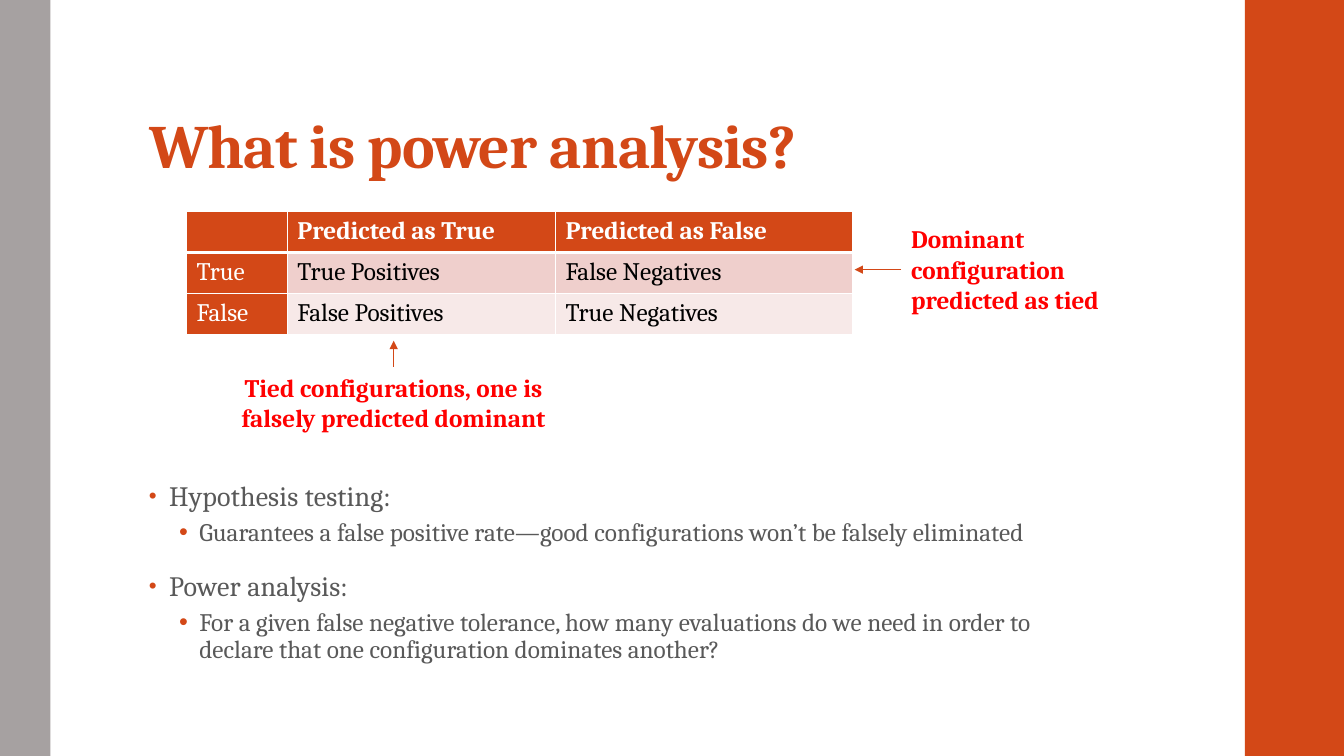
from dataclasses import dataclass

from lxml.etree import SubElement
from pptx import Presentation
from pptx.dml.color import RGBColor
from pptx.enum.shapes import MSO_CONNECTOR, MSO_SHAPE
from pptx.enum.text import MSO_ANCHOR, PP_ALIGN
from pptx.oxml import parse_xml
from pptx.oxml.ns import nsdecls, qn
from pptx.util import Inches, Pt


@dataclass(frozen=True)
class Theme:
    font: str = "Cambria"
    accent: str = "D34817"
    grey: str = "A6A1A1"
    body: str = "595959"
    note: str = "FF0000"
    white: str = "FFFFFF"
    black: str = "000000"
    stripes: tuple = ("EFCFCC", "F7E9E8")
    title_size: int = 44
    topic_size: int = 20
    text_size: int = 18
    hairline: float = 0.75


THEME = Theme()
TITLE = "What is power analysis?"
TOPICS = [
    ("Hypothesis testing:",
     "Guarantees a false positive rate—good configurations won’t be falsely eliminated"),
    ("Power analysis:",
     "For a given false negative tolerance, how many evaluations do we need in order to "
     "declare that one configuration dominates another?"),
]
OUTCOMES = [
    ("", "Predicted as True", "Predicted as False"),
    ("True", "True Positives", "False Negatives"),
    ("False", "False Positives", "True Negatives"),
]
TIED_NOTE = "Tied configurations, one is falsely predicted dominant"
DOMINANT_NOTE = "Dominant configuration predicted as tied"

# Shares are percentages of the slide: left, top, width, height.
BANDS = [((92.62, 0, 7.5, 100), THEME.accent), ((0, 0, 3.75, 100), THEME.grey)]
TITLE_AREA = (10.35, 4.27, 79.5, 20.4)
TOPICS_AREA = (10.35, 62.93, 70.5, 30.27)
TIED_AREA = (16.95, 48.53, 24.68, 13.47)
DOMINANT_AREA = (67.05, 28.93, 18.38, 13.47)
TABLE_CORNER = (13.88, 28)
COLUMN_SHARES = (7.5, 19.95, 22.12)
ROW_SHARE = 5.42
ARROW_REACH = 3.46

deck = Presentation()
deck.slide_width, deck.slide_height = Inches(13.33), Inches(7.5)
page = deck.slides.add_slide(deck.slide_layouts[6])


def across(share):
    return round(deck.slide_width * share / 100)


def down(share):
    return round(deck.slide_height * share / 100)


def place(area):
    left, top, width, height = area
    return across(left), down(top), across(width), down(height)


def style(para, size, color, bold=False, spacing=0):
    for span in para.runs:
        span.font.name = THEME.font
        span.font.size = Pt(size)
        span.font.bold = bold
        span.font.color.rgb = RGBColor.from_string(color)
        if spacing:
            span.font._element.set("spc", str(round(spacing * 100)))


def add_text(area, lines):
    frame = page.shapes.add_textbox(*place(area)).text_frame
    frame.word_wrap = True
    frame.text = "\n".join(lines)
    return frame


def add_note(area, text, align):
    para = add_text(area, [text]).paragraphs[0]
    para.alignment = align
    style(para, THEME.text_size, THEME.note, bold=True)


def add_arrow(start, end):
    arrow = page.shapes.add_connector(
        MSO_CONNECTOR.STRAIGHT, across(start[0]), down(start[1]), across(end[0]), down(end[1]))
    arrow.line.color.rgb = RGBColor.from_string(THEME.accent)
    arrow.line.width = Pt(THEME.hairline)
    SubElement(arrow.line._get_or_add_ln(), qn("a:tailEnd"), type="triangle")
    SubElement(arrow._element.spPr, qn("a:effectLst"))


def set_bullet(para, level, size):
    props = para._p.get_or_add_pPr()
    props.set("marL", str(Inches(0.2 + 0.3 * level)))
    props.set("indent", str(Inches(-0.2)))
    for markup in (f'<a:buClr {nsdecls("a")}><a:srgbClr val="{THEME.accent}"/></a:buClr>',
                   f'<a:buSzPct {nsdecls("a")} val="{size * 1000}"/>',
                   f'<a:buFont {nsdecls("a")} typeface="Arial"/>',
                   f'<a:buChar {nsdecls("a")} char="•"/>'):
        props.append(parse_xml(markup))


def set_borders(cell, row):
    widths = {"L": 1, "R": 1, "T": 3 if row == 1 else 1, "B": 3 if row == 0 else 1}
    for index, (side, width) in enumerate(widths.items()):
        cell._tc.get_or_add_tcPr().insert(index, parse_xml(
            f'<a:ln{side} {nsdecls("a")} w="{Pt(width)}"><a:solidFill>'
            f'<a:srgbClr val="{THEME.white}"/></a:solidFill></a:ln{side}>'))


def add_outcomes():
    left, top = TABLE_CORNER
    area = (left, top, sum(COLUMN_SHARES), ROW_SHARE * len(OUTCOMES))
    table = page.shapes.add_table(len(OUTCOMES), len(COLUMN_SHARES), *place(area)).table
    for column, share in zip(table.columns, COLUMN_SHARES):
        column.width = across(share)
    for row, labels in enumerate(OUTCOMES):
        table.rows[row].height = down(ROW_SHARE)
        for column, label in enumerate(labels):
            cell = table.cell(row, column)
            heading = row == 0 or column == 0
            fill = THEME.accent if heading else THEME.stripes[row - 1]
            cell.fill.solid()
            cell.fill.fore_color.rgb = RGBColor.from_string(fill)
            set_borders(cell, row)
            cell.text_frame.text = label
            style(cell.text_frame.paragraphs[0], THEME.text_size,
                  THEME.white if heading else THEME.black, bold=row == 0)


def add_topics():
    frame = add_text(TOPICS_AREA, [line for topic in TOPICS for line in topic])
    for index, para in enumerate(frame.paragraphs):
        level = index % 2
        para.level = level
        para.line_spacing = 0.9 if level else 0.95
        para.space_before = Pt(3 if level else 14)
        para.space_after = Pt(3 if level else 2)
        set_bullet(para, level, 100 if level else 80)
        style(para, THEME.text_size if level else THEME.topic_size, THEME.body,
              spacing=0 if level else 0.1)


def add_title():
    frame = add_text(TITLE_AREA, [TITLE])
    frame.vertical_anchor = MSO_ANCHOR.BOTTOM
    frame.margin_top = Inches(0.03)
    frame.paragraphs[0].line_spacing = 0.9
    style(frame.paragraphs[0], THEME.title_size, THEME.accent, bold=True, spacing=-0.5)


for area, color in BANDS:
    band = page.shapes.add_shape(MSO_SHAPE.RECTANGLE, *place(area))
    band.shadow.inherit = False
    band.fill.solid()
    band.fill.fore_color.rgb = RGBColor.from_string(color)
    band.line.fill.background()

add_title()
add_topics()
add_outcomes()

add_note(TIED_AREA, TIED_NOTE, PP_ALIGN.CENTER)
tied_middle = TIED_AREA[0] + TIED_AREA[2] / 2
add_arrow((tied_middle, TIED_AREA[1]), (tied_middle, TIED_AREA[1] - ARROW_REACH))

add_note(DOMINANT_AREA, DOMINANT_NOTE, PP_ALIGN.LEFT)
dominant_middle = DOMINANT_AREA[1] + DOMINANT_AREA[3] / 2
add_arrow((DOMINANT_AREA[0], dominant_middle), (DOMINANT_AREA[0] - ARROW_REACH, dominant_middle))

deck.save("out.pptx")
